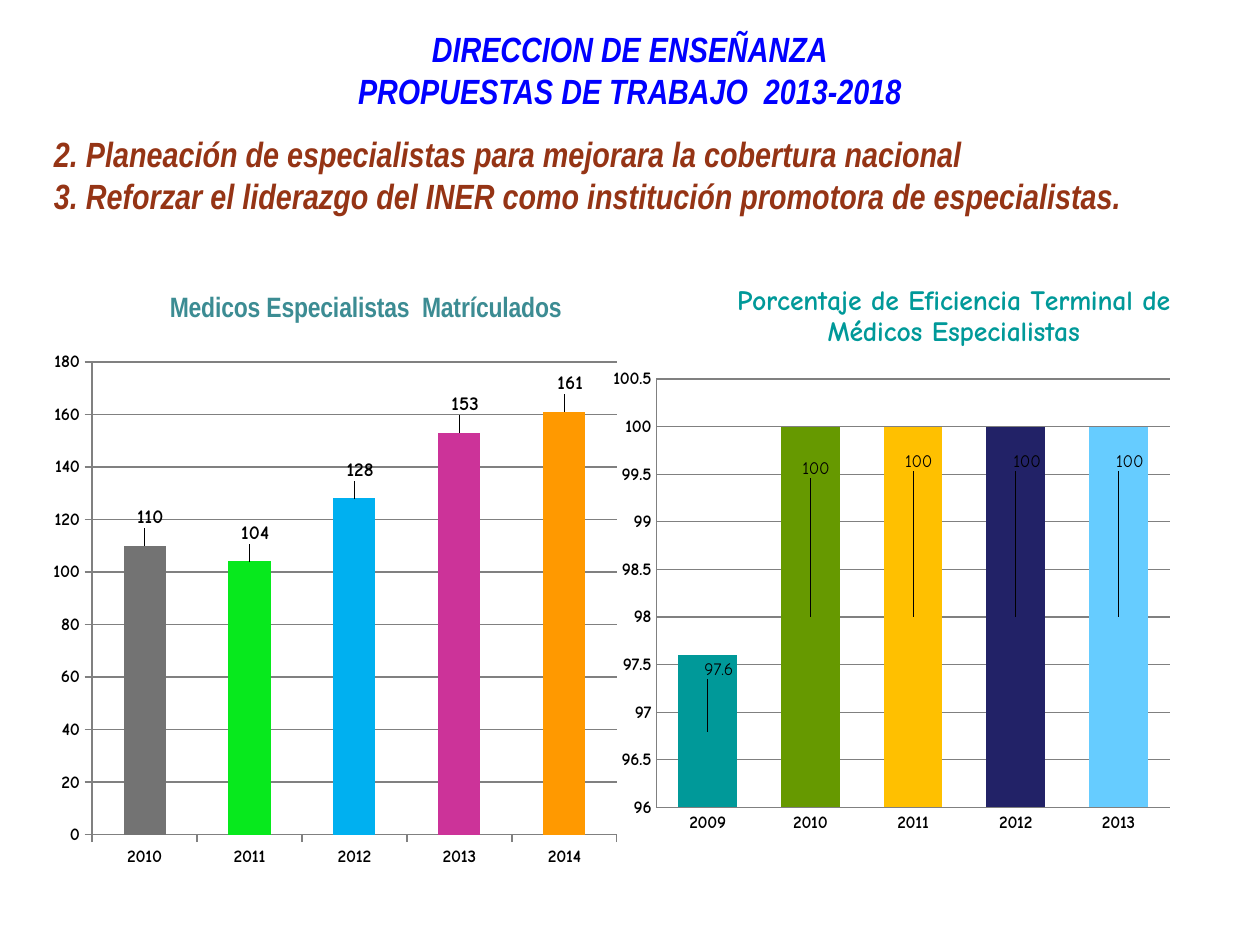
"""Build the slide on specialist enrolment and completion, with two column charts."""
import pptx
import pptx.chart.data
import pptx.dml.color
import pptx.enum.chart
import pptx.enum.text
import pptx.oxml
import pptx.oxml.ns
import pptx.util

Inches = pptx.util.Inches
Pt = pptx.util.Pt
RGB = pptx.dml.color.RGBColor
Kind = pptx.enum.chart.XL_CHART_TYPE
Place = pptx.enum.chart.XL_LABEL_POSITION
Tick = pptx.enum.chart.XL_TICK_MARK
Align = pptx.enum.text.PP_ALIGN
qn = pptx.oxml.ns.qn

BLACK = RGB(0, 0, 0)
GRAY = RGB(0x80, 0x80, 0x80)
BLUE = RGB(0, 0, 0xFF)
BROWN = RGB(0x95, 0x34, 0x15)
SLATE = RGB(0x3C, 0x8C, 0x93)
TEAL = RGB(0, 0x99, 0x99)
PALE = RGB(0xBB, 0xE0, 0xE3)
GREEN = RGB(0x66, 0x99, 0)
GOLD = RGB(0xFF, 0xC0, 0)
NAVY = RGB(0x22, 0x22, 0x67)
SKY = RGB(0x66, 0xCC, 0xFF)
ASH = RGB(0x73, 0x73, 0x73)
LIME = RGB(0x07, 0xE9, 0x1D)
AZURE = RGB(0, 0xB0, 0xF0)
PINK = RGB(0xCC, 0x33, 0x99)
ORANGE = RGB(0xFF, 0x99, 0)
NARROW = "Arial Narrow"
COMIC = "Comic Neue"


def style(font, name, size, color, bold=True, italic=False):
    font.name, font.size = name, Pt(size)
    font.bold, font.italic = bold, italic
    font.color.rgb = color


def layout(node, index, inner=False, **spots):
    for old in node.findall(qn("c:layout")):
        node.remove(old)
    tags = '<c:layoutTarget val="inner"/>' if inner else ""
    if "w" in spots or node.tag == qn("c:title"):
        tags += '<c:xMode val="edge"/><c:yMode val="edge"/>'
    tags += "".join(f'<c:{key} val="{spot}"/>' for key, spot in spots.items())
    node.insert(index, pptx.oxml.parse_xml(
        f'<c:layout {pptx.oxml.ns.nsdecls("c")}>'
        f"<c:manualLayout>{tags}</c:manualLayout></c:layout>"))


deck = pptx.Presentation()
deck.slide_width, deck.slide_height = Inches(10), Inches(7.5)
slide = deck.slides.add_slide(deck.slide_layouts[6])

charts = [
    dict(at=(4.83, 2, 4.5, 4.92), kind=Kind.COLUMN_STACKED, start=2009,
         vals=(97.6, 100, 100, 100, 100),
         fills=(TEAL, GREEN, GOLD, NAVY, SKY),
         title="Porcentaje de Eficiencia Terminal de Médicos Especialistas",
         face=COMIC, color=TEAL, head=(0.22, 0.04),
         plot=(0.085, 0.205, 0.915, 0.691), gap=75, lap=100,
         scale=(96, 100.5, 0.5), tick=Tick.NONE,
         place=Place.CENTER, size=10, bold=False,
         moves=((0.02, -0.1), (0.01, -0.24), (0.01, -0.25),
                (0.02, -0.25), (0.02, -0.25))),
    dict(at=(0.33, 2.25, 4.66, 4.72), kind=Kind.COLUMN_CLUSTERED, start=2010,
         vals=(110, 104, 128, 153, 161),
         fills=(ASH, LIME, AZURE, PINK, ORANGE),
         title="Medicos Especialistas  Matrículados",
         face=NARROW, color=SLATE, head=(0.21, 0.01),
         plot=(0.086, 0.132, 0.894, 0.795), gap=150, lap=0,
         scale=(0, 180, 20), tick=Tick.OUTSIDE,
         place=Place.OUTSIDE_END, size=11, bold=True,
         moves=((0.01, -0.02),) * 5),
]
texts = [
    (0.25, 0.17, Align.CENTER, BLUE,
     ["DIRECCION DE ENSEÑANZA", "PROPUESTAS DE TRABAJO  2013-2018"]),
    (0.33, 1, Align.LEFT, BROWN,
     ["2. Planeación de especialistas para mejorara la cobertura nacional\v"
      "3. Reforzar el liderazgo del INER como institución promotora de especialistas."]),
]

for item in charts:
    data = pptx.chart.data.CategoryChartData()
    data.categories = [str(item["start"] + step) for step in range(5)]
    data.add_series("Series 1", item["vals"])
    frame = slide.shapes.add_chart(item["kind"], *map(Inches, item["at"]), data)
    chart = frame.chart
    style(chart.font, COMIC, 10, BLACK, False)
    chart.has_legend = False
    chart.has_title = True
    para = chart.chart_title.text_frame.paragraphs[0]
    run = para.add_run()
    run.text = item["title"]
    style(run.font, item["face"], 16, item["color"])
    left, top = item["head"]
    layout(next(chart.element.iter(qn("c:title"))), 1, x=left, y=top)
    area = next(chart.element.iter(qn("c:plotArea")))
    layout(area, 0, True, **dict(zip("xywh", item["plot"])))

    for axis in (chart.category_axis, chart.value_axis):
        axis.major_tick_mark, axis.minor_tick_mark = item["tick"], Tick.NONE
        axis.format.line.color.rgb = GRAY
        style(axis.tick_labels.font, COMIC, 10, BLACK)
    axis.minimum_scale, axis.maximum_scale, axis.major_unit = item["scale"]
    axis.has_major_gridlines = True
    axis.major_gridlines.format.line.color.rgb = GRAY
    axis.tick_labels.number_format = "General"
    axis.tick_labels.number_format_is_linked = False

    plot = chart.plots[0]
    plot.gap_width, plot.overlap = item["gap"], item["lap"]
    plot.vary_by_categories = False
    bars = plot.series[0]
    bars.format.fill.solid()
    bars.format.fill.fore_color.rgb = PALE
    bars.data_labels.show_value = True
    style(bars.data_labels.font, COMIC, item["size"], BLACK, item["bold"])
    for index, color in enumerate(item["fills"]):
        point = bars.points[index]
        point.format.fill.solid()
        point.format.fill.fore_color.rgb = color
        label = point.data_label
        style(label.font, COMIC, item["size"], BLACK, item["bold"])
        label.position = item["place"]
    for node, (across, down) in zip(chart.element.iter(qn("c:dLbl")), item["moves"]):
        layout(node, 1, x=across, y=down)

    if item is charts[0]:
        for left, top, align, color, lines in texts:
            box = slide.shapes.add_textbox(
                Inches(left), Inches(top), Inches(9.5), Inches(0.94))
            body = box.text_frame
            body.word_wrap = True
            body.text = "\n".join(lines)
            for para in body.paragraphs:
                para.alignment = align
                style(para.font, NARROW, 20, color, italic=True)

deck.save("out.pptx")
